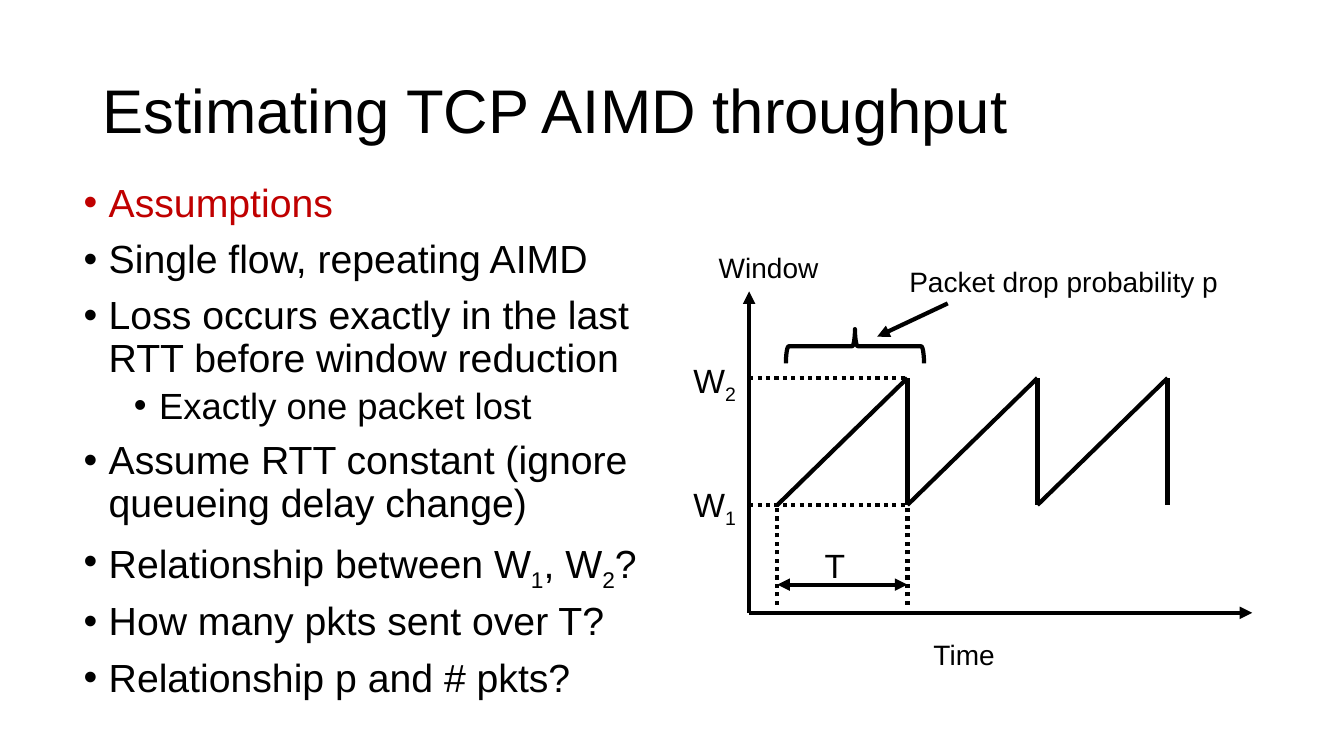
from dataclasses import dataclass

from lxml import etree
from pptx import Presentation
from pptx.dml.color import RGBColor
from pptx.enum.dml import MSO_LINE
from pptx.enum.shapes import MSO_CONNECTOR, MSO_SHAPE
from pptx.enum.text import MSO_ANCHOR, PP_ALIGN
from pptx.oxml.ns import qn
from pptx.util import Pt

STRAIGHT = MSO_CONNECTOR.STRAIGHT
RIGHT_BRACE = MSO_SHAPE.RIGHT_BRACE
DOTTED = MSO_LINE.ROUND_DOT
TOP, MIDDLE = MSO_ANCHOR.TOP, MSO_ANCHOR.MIDDLE
LEFT = PP_ALIGN.LEFT

PX = 9144  # 100 px to the inch


@dataclass(frozen=True)
class Theme:
    font: str = "Arial"
    ink: RGBColor = RGBColor(0x00, 0x00, 0x00)
    accent: RGBColor = RGBColor(0xC0, 0x00, 0x00)
    title: int = 44
    body: int = 28
    sub_body: int = 26
    symbol: int = 24
    label: int = 20
    line: int = 3


THEME = Theme()

# Text is a list of parts; a part starting with "_" is a subscript.
TITLE = ["Estimating TCP AIMD throughput"]
TITLE_BOX = (92, 40, 1150, 145)
BODY_BOX = (73, 177, 589, 548)
BULLETS = [  # level, colour, parts
    (0, THEME.accent, ["Assumptions"]),
    (0, THEME.ink, ["Single flow, repeating AIMD"]),
    (0, THEME.ink, ["Loss occurs exactly in the last RTT before window reduction"]),
    (1, THEME.ink, ["Exactly one packet lost"]),
    (0, THEME.ink, ["Assume RTT constant (ignore queueing delay change)"]),
    (0, THEME.ink, ["Relationship between W", "_1", ", W", "_2", "?"]),
    (0, THEME.ink, ["How many pkts sent over T?"]),
    (0, THEME.ink, ["Relationship p and # pkts?"]),
]
LEVELS = [  # size, left margin px, space before pt
    (THEME.body, 25, 10),
    (THEME.sub_body, 75, 5),
]
HANGING = 25
LABELS = [  # box, size, parts
    ((678, 475, 73, 50), THEME.symbol, ["W", "_1"]),
    ((678, 352, 73, 50), THEME.symbol, ["W", "_2"]),
    ((808, 536, 73, 50), THEME.symbol, ["T"]),
    ((916, 628, 95, 44), THEME.label, ["Time"]),
    ((703, 244, 129, 44), THEME.label, ["Window"]),
    ((892, 257, 350, 44), THEME.label, ["Packet drop probability p"]),
]

# Chart geometry
ORIGIN = (743, 608)
WINDOW_END = (743, 289)
TIME_END = (1242, 608)
FIRST_TOOTH, PERIOD, TEETH = 771, 129, 3
W1_Y, W2_Y = 501, 375
GUIDE_BOTTOM, PERIOD_Y = 600, 580
DROP_ARROW = ((940, 301), (870, 334))
BRACE_BOX = (831, 275, 34, 137)


def add_runs(paragraph, parts, size, color):
    for part in parts:
        run = paragraph.add_run()
        run.text = part.lstrip("_")
        run.font.name = THEME.font
        run.font.size = Pt(size)
        run.font.color.rgb = color
        if part.startswith("_"):
            run._r.get_or_add_rPr().set("baseline", "-25000")


def add_frame(slide, box, anchor=TOP):
    frame = slide.shapes.add_textbox(*(value * PX for value in box)).text_frame
    frame.word_wrap = True
    frame.vertical_anchor = anchor
    return frame


def add_text(slide, box, size, parts, anchor=TOP, spacing=1.0):
    paragraph = add_frame(slide, box, anchor).paragraphs[0]
    paragraph.alignment = LEFT
    paragraph.line_spacing = spacing
    add_runs(paragraph, parts, size, THEME.ink)


def add_bullets(slide):
    frame = add_frame(slide, BODY_BOX)
    for index, (level, color, parts) in enumerate(BULLETS):
        paragraph = frame.add_paragraph() if index else frame.paragraphs[0]
        size, margin, space_before = LEVELS[level]
        paragraph.level = level
        paragraph.line_spacing = 0.9
        paragraph.space_before = Pt(space_before)
        properties = paragraph._p.get_or_add_pPr()
        properties.set("marL", str(margin * PX))
        properties.set("indent", str(-HANGING * PX))
        etree.SubElement(properties, qn("a:buFont"), typeface=THEME.font)
        etree.SubElement(properties, qn("a:buChar"), char="•")
        add_runs(paragraph, parts, size, color)


def style_line(line):
    line.color.rgb = THEME.ink
    line.width = Pt(THEME.line)


def add_line(slide, start, end, dash=None, arrows=()):
    """Draw a line; arrows may hold "headEnd" (at start) and "tailEnd" (at end)."""
    points = [value * PX for value in (*start, *end)]
    connector = slide.shapes.add_connector(STRAIGHT, *points)
    style_line(connector.line)
    if dash:
        connector.line.dash_style = dash
    outline = connector.line._get_or_add_ln()
    for arrow in arrows:
        etree.SubElement(outline, qn(f"a:{arrow}"), type="triangle")
    etree.SubElement(connector._element.spPr, qn("a:effectLst"))


def add_sawtooth(slide):
    for tooth in range(TEETH):
        left = FIRST_TOOTH + tooth * PERIOD
        right = left + PERIOD
        add_line(slide, (left, W1_Y), (right, W2_Y))
        add_line(slide, (right, W2_Y), (right, W1_Y))


def add_guides(slide):
    first_drop = FIRST_TOOTH + PERIOD
    for y in (W2_Y, W1_Y):
        add_line(slide, (ORIGIN[0], y), (first_drop, y), DOTTED)
    for x in (FIRST_TOOTH, first_drop):
        add_line(slide, (x, GUIDE_BOTTOM), (x, W1_Y), DOTTED)
    add_line(slide, (FIRST_TOOTH, PERIOD_Y), (first_drop, PERIOD_Y),
             arrows=("headEnd", "tailEnd"))


def add_brace(slide):
    brace = slide.shapes.add_shape(RIGHT_BRACE, *(value * PX for value in BRACE_BOX))
    brace.rotation = 270
    brace.shadow.inherit = False
    brace.fill.background()
    style_line(brace.line)


def main():
    presentation = Presentation()
    presentation.slide_width, presentation.slide_height = 1333 * PX, 750 * PX
    slide = presentation.slides.add_slide(presentation.slide_layouts[6])

    add_text(slide, TITLE_BOX, THEME.title, TITLE, MIDDLE, 0.9)
    add_bullets(slide)
    for start, end in ((ORIGIN, WINDOW_END), (ORIGIN, TIME_END), DROP_ARROW):
        add_line(slide, start, end, arrows=("tailEnd",))
    add_sawtooth(slide)
    add_guides(slide)
    for box, size, parts in LABELS:
        add_text(slide, box, size, parts)
    add_brace(slide)

    presentation.save("out.pptx")


if __name__ == "__main__":
    main()
